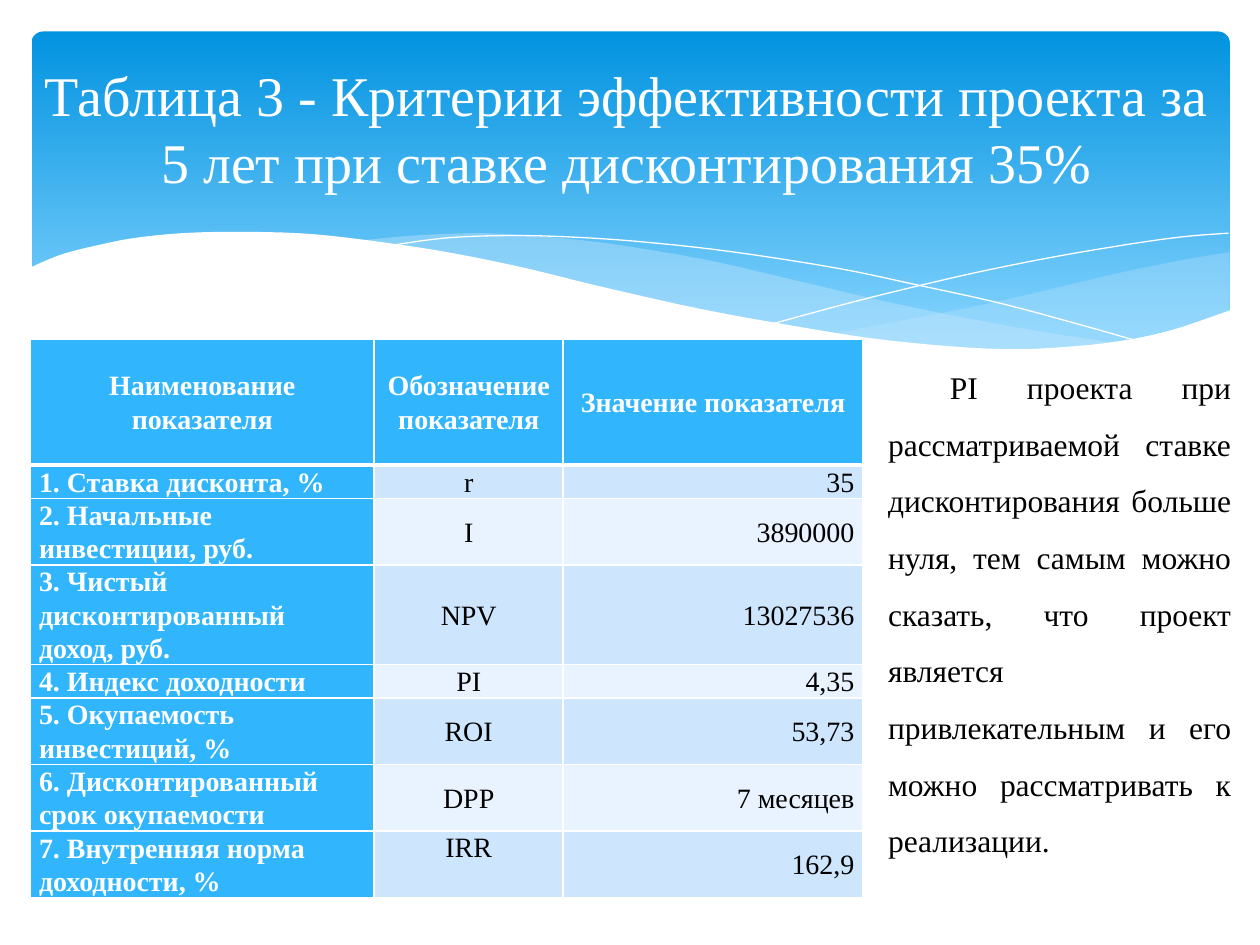
from collections import namedtuple

from lxml import etree
from pptx import Presentation, util as u
from pptx.dml.color import RGBColor
from pptx.enum import shapes, text
from pptx.oxml.ns import qn

Box = namedtuple("Box", "left top width height")
COLUMNS, ROWS = 10, 7.5
CELL = u.Inches(1)
FONT = "Times New Roman"
COLORS = {
    "white": "FFFFFF", "black": "000000", "banner_top": "0293E0",
    "banner_bottom": "83D3FE", "veil": "C6E7FC", "accent": "31B6FD",
    "band_dark": "CEE5FE", "band_light": "E8F3FF",
}
LEFT, CENTER, RIGHT = text.PP_ALIGN.LEFT, text.PP_ALIGN.CENTER, text.PP_ALIGN.RIGHT

BANNER = Box(0.25, 0.25, 9.51, 2.7)
TITLE = Box(0.24, 0.53, 9.47, 1.44)
TABLE = Box(0.24, 2.69, 6.61, 4.19)
COMMENT = Box(6.95, 2.72, 2.92, 4.25)

# Curves are given in grid units from the corner of the banner.
RIGHT_VEIL = [
    [(9.51, 1.75), (9.1, 1.82), (8.66, 1.91), (8.36, 1.98), (7.54, 2.17), (6.36, 2.4)],
    [(6.36, 2.4), (6.8, 2.46), (7.32, 2.51), (7.78, 2.53), (8.29, 2.51),
     (8.8, 2.44), (9.17, 2.34), (9.51, 2.22)],
]
MIDDLE_VEIL = [
    [(8.68, 2.48), (8.12, 2.4), (7.5, 2.29), (6.81, 2.15), (6.04, 1.97), (5.44, 1.83),
     (4.89, 1.73), (4.4, 1.66), (3.95, 1.62), (3.55, 1.6), (3.03, 1.62), (2.61, 1.66)],
    [(2.61, 1.66), (3.17, 1.74), (3.79, 1.86), (4.24, 1.97), (5.05, 2.15), (5.76, 2.3),
     (6.4, 2.41), (6.97, 2.49), (7.48, 2.52), (7.93, 2.53), (8.32, 2.52), (8.68, 2.48)],
]
FALLING_LINE = [
    [(2.84, 1.7), (3.28, 1.64), (3.76, 1.62), (4.25, 1.63), (4.85, 1.67), (5.57, 1.75),
     (6.4, 1.88), (7.02, 2.01), (7.7, 2.16), (8.44, 2.36), (8.82, 2.47)],
]
RISING_LINE = [
    [(5.88, 2.32), (6.47, 2.16), (6.95, 2.04), (7.51, 1.91), (8.11, 1.79),
     (8.7, 1.69), (9.13, 1.63), (9.5, 1.6)],
]
WHITE_WAVE = [
    [(9.52, 2.21), (9.05, 2.37), (8.62, 2.46), (8.12, 2.51), (7.68, 2.52), (7.19, 2.49),
     (6.63, 2.43), (6.01, 2.33), (5.3, 2.2), (4.5, 2.02), (3.93, 1.88), (3.4, 1.77),
     (2.91, 1.69), (2.25, 1.61), (1.68, 1.59), (1.21, 1.6), (0.81, 1.64), (0.51, 1.7),
     (0.27, 1.76), (0.11, 1.82), (-0.02, 1.88)],
    [(-0.02, 3.04), (9.52, 3.04)],
]

TITLE_TEXT = "Таблица 3 - Критерии эффективности проекта за 5 лет при ставке дисконтирования 35%"
COMMENT_TEXT = (
    "PI проекта при рассматриваемой ставке дисконтирования больше нуля, тем самым "
    "можно сказать, что проект является привлекательным и его можно рассматривать "
    "к реализации."
)
TABLE_ROWS = [
    ("Наименование показателя", "Обозначение показателя", "Значение показателя"),
    ("1. Ставка дисконта, %", "r", "35"),
    ("2. Начальные инвестиции, руб.", "I", "3890000"),
    ("3. Чистый дисконтированный доход, руб.", "NPV", "13027536"),
    ("4. Индекс доходности", "PI", "4,35"),
    ("5. Окупаемость инвестиций, %", "ROI", "53,73"),
    ("6. Дисконтированный срок окупаемости", "DPP", "7 месяцев"),
    ("7. Внутренняя норма доходности, %", "IRR", "162,9"),
]
COLUMN_WIDTHS = [2.73, 1.5, 2.38]
ROW_HEIGHTS = [1, 0.24, 0.49, 0.75, 0.24, 0.49, 0.49, 0.49]


def color(name):
    return RGBColor.from_string(COLORS[name])


def grid(length):
    return u.Emu(round(length * CELL))


def place(box):
    return [grid(length) for length in box]


def add_run(paragraph, words, size, color_name, bold=False):
    run = paragraph.add_run()
    run.text = words
    run.font.name, run.font.size, run.font.bold = FONT, u.Pt(size), bold
    run.font.color.rgb = color(color_name)


def smooth(points, steps=5):
    """Return points along a Catmull-Rom curve through the given ones."""
    padded = [points[0], *points, points[-1]]
    curve = [points[0]]
    for a, b, c, d in zip(padded, padded[1:], padded[2:], padded[3:]):
        for step in range(1, steps + 1):
            t = step / steps
            curve.append(tuple(
                (2 * q + (r - p) * t + (2 * p - 5 * q + 4 * r - s) * t ** 2
                 + (3 * q - p - 3 * r + s) * t ** 3) / 2
                for p, q, r, s in zip(a, b, c, d)))
    return curve


def add_wave(slide, box, edges, fill=None, opacity=100):
    """Draw a filled outline, or a white hairline when no fill is given."""
    points = [(grid(box.left + x), grid(box.top + y))
              for edge in edges for x, y in smooth(edge)]
    builder = slide.shapes.build_freeform(*points[0])
    builder.add_line_segments(points[1:], close=fill is not None)
    wave = builder.convert_to_shape()
    wave.shadow.inherit = False
    if fill is None:
        wave.fill.background()
        wave.line.color.rgb = color("white")
        wave.line.width = u.Pt(0)
        return
    wave.line.fill.background()
    wave.fill.solid()
    wave.fill.fore_color.rgb = color(fill)
    if opacity < 100:
        fill_color = wave.element.spPr.find(qn("a:solidFill"))[0]
        etree.SubElement(fill_color, qn("a:alpha"), val=str(opacity * 1000))


def add_banner(slide, box):
    banner = slide.shapes.add_shape(shapes.MSO_SHAPE.ROUNDED_RECTANGLE, *place(box))
    banner.adjustments[0] = 0.034
    banner.shadow.inherit = False
    banner.line.fill.background()
    banner.fill.gradient()
    banner.fill.gradient_angle = 270
    stops = [("banner_top", 0), ("banner_bottom", 0.9)]
    for stop, (name, position) in zip(banner.fill.gradient_stops, stops):
        stop.color.rgb, stop.position = color(name), position
    add_wave(slide, box, RIGHT_VEIL, "veil", 29)
    add_wave(slide, box, MIDDLE_VEIL, "veil", 40)
    add_wave(slide, box, FALLING_LINE)
    add_wave(slide, box, RISING_LINE)
    add_wave(slide, box, WHITE_WAVE, "white")


def add_title(slide, box):
    title = slide.shapes.title
    title.left, title.top, title.width, title.height = place(box)
    title.element.getparent().append(title.element)  # bring in front of the banner
    frame = title.text_frame
    frame.word_wrap, frame.auto_size = True, text.MSO_AUTO_SIZE.NONE
    frame.vertical_anchor = text.MSO_ANCHOR.MIDDLE
    frame.margin_top, frame.margin_bottom = 0, grid(box.height / 3)
    frame.paragraphs[0].alignment = CENTER
    add_run(frame.paragraphs[0], TITLE_TEXT, 32, "white")


def set_borders(cell, top, bottom):
    properties = cell._tc.get_or_add_tcPr()
    for index, (side, width) in enumerate(zip("LRTB", (1, 1, top, bottom))):
        line = etree.Element(qn(f"a:ln{side}"), w=str(u.Pt(width)))
        fill = etree.SubElement(line, qn("a:solidFill"))
        etree.SubElement(fill, qn("a:srgbClr"), val=COLORS["white"])
        properties.insert(index, line)


def format_cell(cell, words, row, column):
    heading = row == 0 or column == 0
    band = "band_dark" if row % 2 else "band_light"
    cell.fill.solid()
    cell.fill.fore_color.rgb = color("accent" if heading else band)
    set_borders(cell, top=3 if row == 1 else 1, bottom=3 if row == 0 else 1)
    cell.margin_left = cell.margin_right = grid(0.07)
    cell.margin_top = cell.margin_bottom = 0
    cell.vertical_anchor = text.MSO_ANCHOR.TOP if words == "IRR" else text.MSO_ANCHOR.MIDDLE
    paragraph = cell.text_frame.paragraphs[0]
    paragraph.alignment = CENTER if row == 0 else (LEFT, CENTER, RIGHT)[column]
    paragraph.line_spacing, paragraph.space_after = 1.07, u.Pt(8)
    add_run(paragraph, words, 16, "white" if heading else "black", heading)


def add_criteria_table(slide, box):
    table = slide.shapes.add_table(len(TABLE_ROWS), len(COLUMN_WIDTHS), *place(box)).table
    table.horz_banding = False
    for column, width in zip(table.columns, COLUMN_WIDTHS):
        column.width = grid(box.width * width / sum(COLUMN_WIDTHS))
    for row, height in zip(table.rows, ROW_HEIGHTS):
        row.height = grid(box.height * height / sum(ROW_HEIGHTS))
    for row, values in enumerate(TABLE_ROWS):
        for column, words in enumerate(values):
            format_cell(table.cell(row, column), words, row, column)


def add_comment(slide, box):
    frame = slide.shapes.add_textbox(*place(box)).text_frame
    frame.word_wrap, frame.auto_size = True, text.MSO_AUTO_SIZE.SHAPE_TO_FIT_TEXT
    paragraph = frame.paragraphs[0]
    paragraph.alignment = text.PP_ALIGN.JUSTIFY
    paragraph.line_spacing, paragraph.space_after = 1.5, u.Pt(8)
    paragraph._p.get_or_add_pPr().set("indent", str(grid(0.49)))
    add_run(paragraph, COMMENT_TEXT, 18, "black")


def main():
    presentation = Presentation()
    presentation.slide_width, presentation.slide_height = grid(COLUMNS), grid(ROWS)
    slide = presentation.slides.add_slide(presentation.slide_layouts[5])
    add_banner(slide, BANNER)
    add_title(slide, TITLE)
    add_criteria_table(slide, TABLE)
    add_comment(slide, COMMENT)
    presentation.save("out.pptx")


if __name__ == "__main__":
    main()
